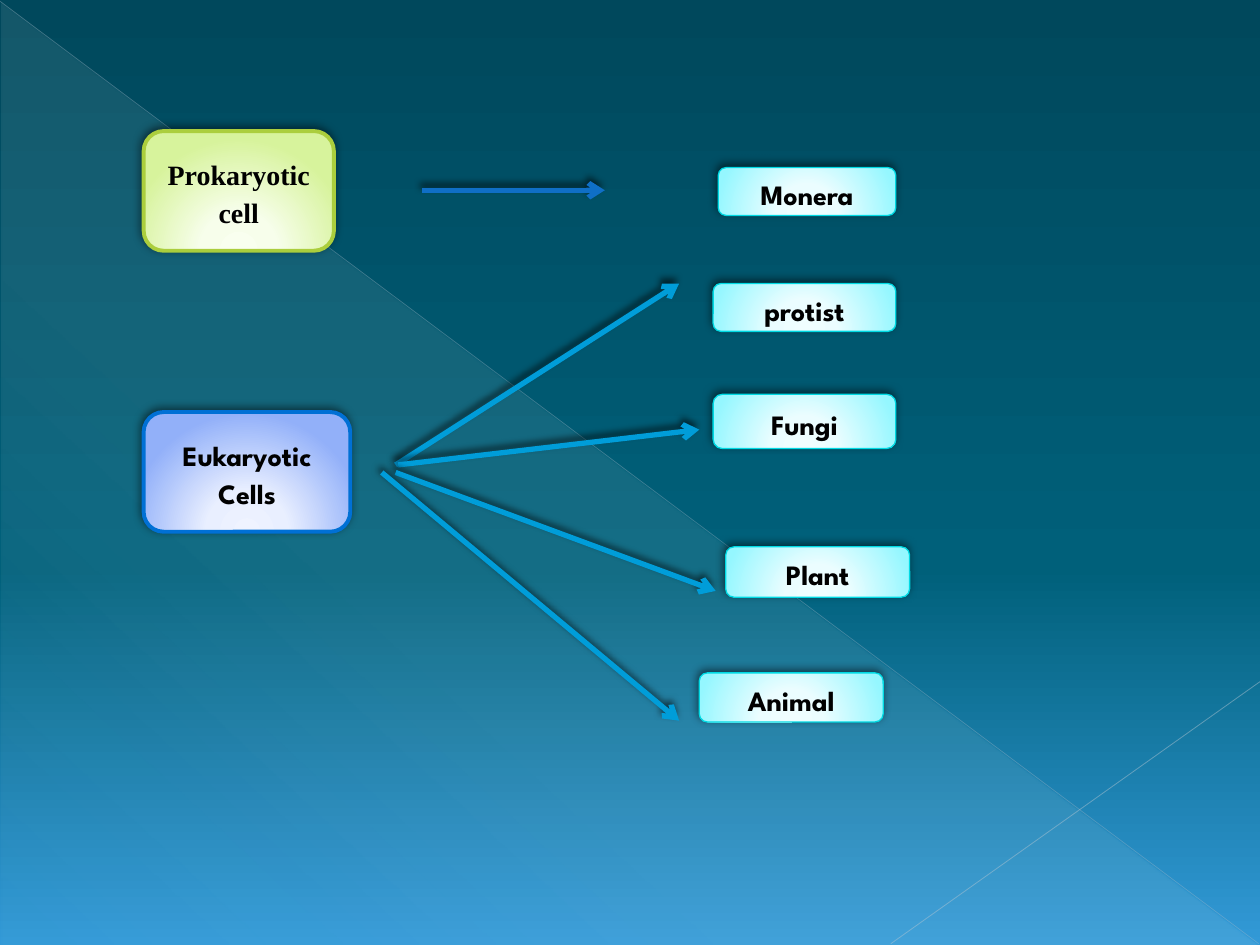
"""Build a slide that sorts the living kingdoms by cell type."""
from lxml import etree
from pptx import Presentation
from pptx.dml.color import RGBColor
from pptx.enum.shapes import MSO_CONNECTOR, MSO_SHAPE
from pptx.enum.text import MSO_ANCHOR, PP_ALIGN
from pptx.oxml import parse_xml
from pptx.oxml.ns import nsdecls, qn
from pptx.util import Inches, Pt

LINE = MSO_CONNECTOR.STRAIGHT
ROUND = MSO_SHAPE.ROUNDED_RECTANGLE
WEDGE = MSO_SHAPE.RIGHT_TRIANGLE
MID = MSO_ANCHOR.MIDDLE
CENTER = PP_ALIGN.CENTER
LINEAR = '<a:lin ang="{}" scaled="0"/>'
GLOW = ('<a:path path="circle"><a:fillToRect l="50000" t="155000" '
        'r="50000" b="-55000"/></a:path>')
rgb = RGBColor.from_string


def blend(fill, root, stops, shade):
    fill.gradient()
    marks = "".join(
        f'<a:gs pos="{pos * 1000}"><a:srgbClr val="{tone}">'
        f'<a:alpha val="{alpha * 1000}"/></a:srgbClr></a:gs>'
        for pos, tone, alpha in stops)
    old = next(root.iter(qn("a:gradFill")))
    new = parse_xml(f'<a:gradFill {nsdecls("a")} rotWithShape="1">'
                    f'<a:gsLst>{marks}</a:gsLst>{shade}</a:gradFill>')
    old.getparent().replace(old, new)


def cast(props, alpha, blur, dist):
    list_ = props.find(qn("a:effectLst"))
    drop = etree.SubElement(
        list_, qn("a:outerShdw"), blurRad=str(Pt(blur)), dist=str(Pt(dist)),
        dir=str(245 * 60000), algn="tl", rotWithShape="0")
    tone = etree.SubElement(drop, qn("a:srgbClr"), val="000000")
    etree.SubElement(tone, qn("a:alpha"), val=str(alpha * 1000))


deck = Presentation()
deck.slide_width, deck.slide_height = Inches(10), Inches(7.5)
slide = deck.slides.add_slide(deck.slide_layouts[6])
shapes = slide.shapes
blend(slide.background.fill, slide.element,
      [(0, "00485C", 100), (60, "00607A", 100), (100, "3299D7", 100)],
      LINEAR.format(90 * 60000))

wedge = shapes.add_shape(WEDGE, Inches(0.01), Inches(0.02),
                         Inches(9.98), Inches(7.48))
blend(wedge.fill, wedge.element,
      [(0, "DBF5F9", 10), (70, "DBF5F9", 8), (100, "DBF5F9", 1)],
      LINEAR.format(133 * 60000))
wedge.line.fill.background()
wedge.shadow.inherit = False

BLUE = "009DD9"
lines = [
    (0, 0.01, 9.99, 7.49, "ACC0CE", 0.39, 35),
    (10, 5.41, 7.07, 7.49, "B5C7D3", 0.47, 45),
    (3.35, 1.51, 4.8, 1.51, "0F6FC6", 3, 100),
    (3.14, 3.69, 5.39, 2.25, BLUE, 3, 100),
    (3.16, 3.69, 5.55, 3.41, BLUE, 3, 100),
    (3.14, 3.75, 5.68, 4.69, BLUE, 3, 100),
    (3.03, 3.75, 5.39, 5.72, BLUE, 3, 100),
]
for *ends, tone, width, alpha in lines:
    link = shapes.add_connector(LINE, *map(Inches, ends))
    link.line.color.rgb = rgb(tone)
    link.line.width = Pt(width)
    props = link.element.spPr
    etree.SubElement(props, qn("a:effectLst"))
    if alpha < 100:
        ink = next(props.iter(qn("a:srgbClr")))
        etree.SubElement(ink, qn("a:alpha"), val=str(alpha * 1000))
    else:
        etree.SubElement(props.find(qn("a:ln")), qn("a:tailEnd"), type="arrow")
        cast(props, 60, 4, 3)

SPARTAN = "League Spartan"
LIME = ("F9FFEF", "F7FEEB", "D7F39C", "ABCE3D", 2.25)
NAVY = ("EFF3FF", "E9EFFF", "92B0F9", "0070D5", 2.25)
AQUA = ("F0FEFF", "EBFDFF", "95F7FF", "00DAE4", 0.75)
boxes = [
    ("Prokaryotic cell", 1.14, 1.04, 1.51, 0.95, LIME, "Times New Roman"),
    ("Eukaryotic Cells", 1.14, 3.27, 1.64, 0.95, NAVY, SPARTAN),
    ("Monera", 5.7, 1.33, 1.41, 0.38, AQUA, SPARTAN),
    ("protist", 5.66, 2.25, 1.45, 0.38, AQUA, SPARTAN),
    ("Fungi", 5.66, 3.13, 1.45, 0.43, AQUA, SPARTAN),
    ("Plant", 5.76, 4.34, 1.46, 0.4, AQUA, SPARTAN),
    ("Animal", 5.55, 5.34, 1.46, 0.39, AQUA, SPARTAN),
]
for label, *place, (core, ring, rim, edge, width), face in boxes:
    box = shapes.add_shape(ROUND, *map(Inches, place))
    blend(box.fill, box.element,
          [(0, core, 100), (34, ring, 100), (100, rim, 100)], GLOW)
    box.line.color.rgb = rgb(edge)
    box.line.width = Pt(width)
    box.shadow.inherit = False
    cast(box.element.spPr, 50, 5, 2)
    frame = box.text_frame
    frame.text = label
    frame.word_wrap = True
    frame.vertical_anchor = MID
    para = frame.paragraphs[0]
    para.alignment = CENTER
    para.line_spacing = 1.15
    para.space_after = Pt(10)
    para._p.get_or_add_pPr().set("rtl", "1")
    font = para.runs[0].font
    font.name, font.size, font.bold = face, Pt(16), True
    font.color.rgb = rgb("000000")

deck.save("out.pptx")
